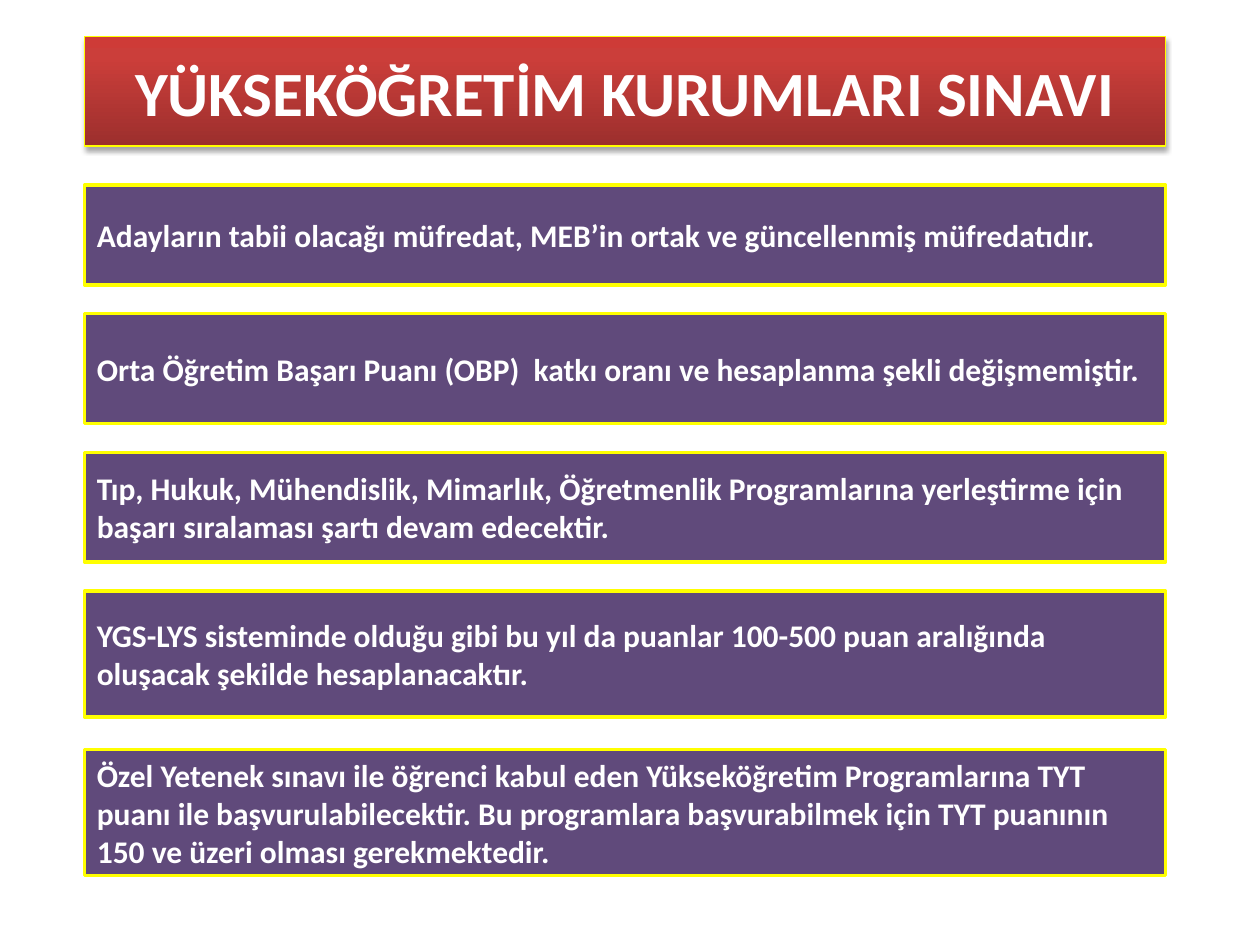
from lxml import etree
from pptx import Presentation
from pptx.dml.color import RGBColor
from pptx.enum import shapes, text
from pptx.oxml import parse_xml
from pptx.util import Inches, Pt

NAMESPACE = 'xmlns:a="http://schemas.openxmlformats.org/drawingml/2006/main"'
LEFT, WIDTH = Inches(0.67), Inches(8.58)


def color(value):
    return RGBColor.from_string(value)


def write_text(shape, content, size, alignment):
    frame = shape.text_frame
    frame.word_wrap = True
    frame.auto_size = text.MSO_AUTO_SIZE.NONE
    frame.vertical_anchor = text.MSO_ANCHOR.MIDDLE
    paragraph = frame.paragraphs[0]
    paragraph.text = content
    paragraph.alignment = alignment
    paragraph.font.name = "Calibri"
    paragraph.font.size = Pt(size)
    paragraph.font.bold = True
    paragraph.font.color.rgb = color("FFFFFF")


presentation = Presentation()
presentation.slide_width = Inches(10)
presentation.slide_height = Inches(7.5)
slide = presentation.slides.add_slide(presentation.slide_layouts[5])

# Title banner: rounded, red gradient, soft shadow
title = slide.shapes.title
title.left, title.top = LEFT, Inches(0.29)
title.width, title.height = WIDTH, Inches(0.87)
write_text(title, "YÜKSEKÖĞRETİM KURUMLARI SINAVI", 36, text.PP_ALIGN.CENTER)

stops = "".join(
    f'<a:gs pos="{position * 1000}"><a:srgbClr val="{value}"/></a:gs>'
    for position, value in [(0, "9C2F2D"), (80, "CB3E3A"), (100, "CE3B37")]
)
banner_parts = [
    f'<a:prstGeom {NAMESPACE} prst="roundRect"><a:avLst/></a:prstGeom>',
    f'<a:gradFill {NAMESPACE} rotWithShape="1"><a:gsLst>{stops}</a:gsLst>'
    '<a:lin ang="16200000" scaled="0"/></a:gradFill>',
    f'<a:effectLst {NAMESPACE}><a:outerShdw blurRad="40000" dist="23000" dir="5400000" '
    'rotWithShape="0"><a:srgbClr val="000000"><a:alpha val="35000"/></a:srgbClr>'
    '</a:outerShdw></a:effectLst>',
]
for part in banner_parts:
    title.element.spPr.append(parse_xml(part))
title.line.color.rgb = color("FFFF00")
title.line.width = Pt(0.75)

# Statement boxes: top, height, wording
statements = [
    (1.47, 0.79, "Adayların tabii olacağı müfredat, MEB’in ortak ve güncellenmiş müfredatıdır."),
    (2.49, 0.87, "Orta Öğretim Başarı Puanı (OBP)  katkı oranı ve hesaplanma şekli değişmemiştir."),
    (3.59, 0.87, "Tıp, Hukuk, Mühendislik, Mimarlık, Öğretmenlik Programlarına yerleştirme için "
                 "başarı sıralaması şartı devam edecektir."),
    (4.69, 1, "YGS-LYS sisteminde olduğu gibi bu yıl da puanlar 100-500 puan aralığında "
              "oluşacak şekilde hesaplanacaktır."),
    (5.95, 1, "Özel Yetenek sınavı ile öğrenci kabul eden Yükseköğretim Programlarına TYT "
              "puanı ile başvurulabilecektir. Bu programlara başvurabilmek için TYT puanının "
              "150 ve üzeri olması gerekmektedir."),
]
for top, height, content in statements:
    box = slide.shapes.add_shape(
        shapes.MSO_SHAPE.RECTANGLE, LEFT, Inches(top), WIDTH, Inches(height))
    box.shadow.inherit = False
    box.fill.solid()
    box.fill.fore_color.rgb = color("604A7B")
    box.line.color.rgb = color("FFFF00")
    box.line.width = Pt(2)
    write_text(box, content, 18, text.PP_ALIGN.LEFT)

presentation.save("out.pptx")
